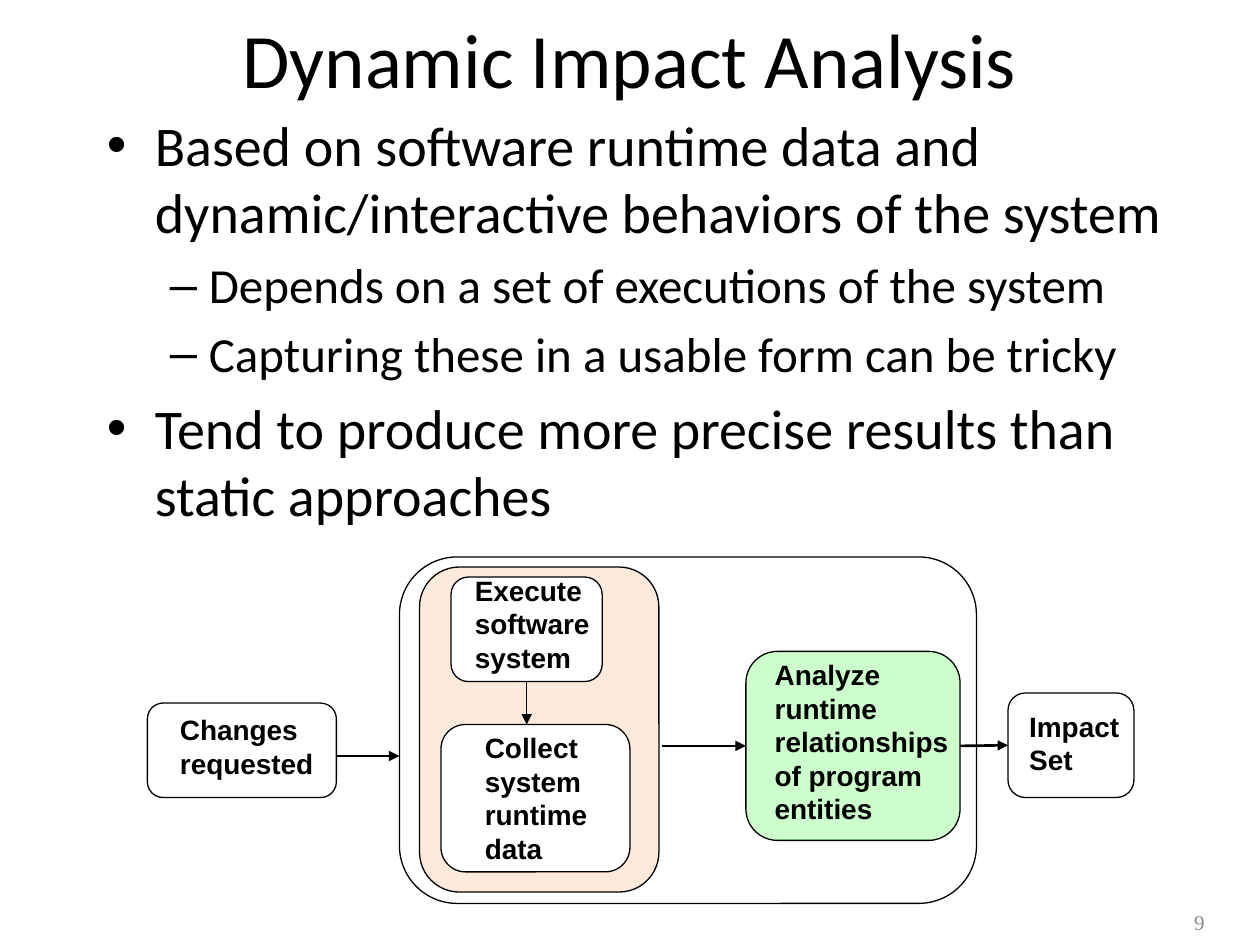
from dataclasses import dataclass

from lxml.etree import SubElement
from pptx import Presentation
from pptx.dml.color import RGBColor
from pptx.enum.shapes import MSO_CONNECTOR, MSO_SHAPE
from pptx.enum.text import MSO_ANCHOR, PP_ALIGN
from pptx.oxml.ns import qn
from pptx.util import Inches, Pt

TOP, LEFT, BOTTOM, RIGHT = range(4)


@dataclass(frozen=True)
class Theme:
    black: str = "000000"
    white: str = "FFFFFF"
    gray: str = "8C8C8C"
    peach: str = "FDEADA"
    green: str = "CCFFCC"
    heading_font: str = "Calibri"
    label_font: str = "Arial"
    number_font: str = "Times New Roman"
    title_size: int = 44
    body_sizes: tuple = (32, 28)
    label_size: int = 16
    number_size: int = 12
    thin: float = 0.75
    thick: float = 1.5


def write_text(paragraph, text, *, font, size, color, bold=False,
               align=PP_ALIGN.LEFT, space_before=0):
    paragraph.text = text
    paragraph.alignment = align
    paragraph.space_before = Pt(space_before)
    paragraph.font.name = font
    paragraph.font.size = Pt(size)
    paragraph.font.bold = bold
    paragraph.font.color.rgb = RGBColor.from_string(color)


class SlideBuilder:
    bullets = (("•", 0.38, -0.38), ("–", 0.81, -0.31))

    def __init__(self, slide, theme):
        self.slide = slide
        self.theme = theme

    def title(self, text, left, top, width, height):
        shape = self.slide.shapes.title
        shape.left, shape.top = Inches(left), Inches(top)
        shape.width, shape.height = Inches(width), Inches(height)
        shape.text_frame.vertical_anchor = MSO_ANCHOR.MIDDLE
        write_text(shape.text_frame.paragraphs[0], text,
                   font=self.theme.heading_font, size=self.theme.title_size,
                   color=self.theme.black, align=PP_ALIGN.CENTER)

    def text_frame(self, left, top, width, height, anchor=MSO_ANCHOR.TOP):
        shape = self.slide.shapes.add_textbox(
            Inches(left), Inches(top), Inches(width), Inches(height))
        shape.text_frame.word_wrap = True
        shape.text_frame.vertical_anchor = anchor
        return shape.text_frame

    def bullet_list(self, items, left, top, width, height):
        frame = self.text_frame(left, top, width, height)
        for index, (level, text) in enumerate(items):
            paragraph = frame.add_paragraph() if index else frame.paragraphs[0]
            character, margin, indent = self.bullets[level]
            size = self.theme.body_sizes[level]
            paragraph.level = level
            properties = paragraph._p.get_or_add_pPr()
            properties.set("marL", str(Inches(margin)))
            properties.set("indent", str(Inches(indent)))
            SubElement(properties, qn("a:buFont"), typeface="Arial")
            SubElement(properties, qn("a:buChar"), char=character)
            write_text(paragraph, text, font=self.theme.heading_font, size=size,
                       color=self.theme.black,
                       space_before=0.2 * size if index else 0)

    def box(self, left, top, width, height, fill=None):
        shape = self.slide.shapes.add_shape(
            MSO_SHAPE.FLOWCHART_ALTERNATE_PROCESS,
            Inches(left), Inches(top), Inches(width), Inches(height))
        shape.shadow.inherit = False
        if fill:
            shape.fill.solid()
            shape.fill.fore_color.rgb = RGBColor.from_string(fill)
        else:
            shape.fill.background()
        shape.line.color.rgb = RGBColor.from_string(self.theme.black)
        shape.line.width = Pt(self.theme.thin)
        return shape

    def label(self, text, left, top, width, height):
        frame = self.text_frame(left, top, width, height)
        write_text(frame.paragraphs[0], text, font=self.theme.label_font,
                   size=self.theme.label_size, color=self.theme.black, bold=True)

    def arrow(self, start, end, width, source=None, target=None):
        connector = self.slide.shapes.add_connector(
            MSO_CONNECTOR.STRAIGHT, *map(Inches, start + end))
        if source:
            connector.begin_connect(*source)
        if target:
            connector.end_connect(*target)
        connector.line.color.rgb = RGBColor.from_string(self.theme.black)
        connector.line.width = Pt(width)
        SubElement(connector.line._get_or_add_ln(), qn("a:tailEnd"), type="triangle")
        SubElement(connector._element.spPr, qn("a:effectLst"))

    def slide_number(self, text, left, top, width, height):
        frame = self.text_frame(left, top, width, height, MSO_ANCHOR.MIDDLE)
        write_text(frame.paragraphs[0], text, font=self.theme.number_font,
                   size=self.theme.number_size, color=self.theme.gray,
                   align=PP_ALIGN.RIGHT)


def main():
    presentation = Presentation()
    presentation.slide_width, presentation.slide_height = Inches(10), Inches(7.5)
    theme = Theme()
    slide = presentation.slides.add_slide(presentation.slide_layouts[5])
    builder = SlideBuilder(slide, theme)

    builder.title("Dynamic Impact Analysis", 0.5, -0.17, 9, 1.25)
    builder.bullet_list([
        (0, "Based on software runtime data and dynamic/interactive behaviors of the system"),
        (1, "Depends on a set of executions of the system"),
        (1, "Capturing these in a usable form can be tricky"),
        (0, "Tend to produce more precise results than static approaches"),
    ], 0.75, 0.83, 8.92, 6)

    builder.box(3.17, 4.42, 4.58, 2.75)
    builder.box(3.33, 4.5, 1.9, 2.58, theme.peach)
    builder.box(1.17, 5.58, 1.5, 0.75)
    execute = builder.box(3.58, 4.58, 1.2, 0.83, theme.white)
    builder.box(3.5, 5.75, 1.5, 1.17, theme.white)
    analyze = builder.box(5.92, 5.17, 1.7, 1.5, theme.green)
    impact = builder.box(8, 5.5, 1, 0.83)

    for label in (
        ("Changes requested", 1.33, 5.61, 1.6, 0.64),
        ("Execute software system", 3.67, 4.5, 1.2, 0.91),
        ("Collect system runtime data", 3.75, 5.75, 1.5, 1.18),
        ("Analyze runtime relationships of program entities", 6.05, 5.17, 1.7, 1.45),
        ("Impact Set", 8.07, 5.58, 1.1, 0.64),
    ):
        builder.label(*label)

    builder.arrow((2.67, 6), (3.17, 6), theme.thick)
    builder.arrow((4.18, 5.41), (4.18, 5.75), theme.thin, source=(execute, BOTTOM))
    builder.arrow((5.25, 5.92), (5.92, 5.92), theme.thick, target=(analyze, LEFT))
    builder.arrow((7.62, 5.92), (8, 5.92), theme.thick,
                  source=(analyze, RIGHT), target=(impact, LEFT))

    builder.slide_number("9", 7.33, 7.12, 2.33, 0.4)
    presentation.save("out.pptx")


if __name__ == "__main__":
    main()
